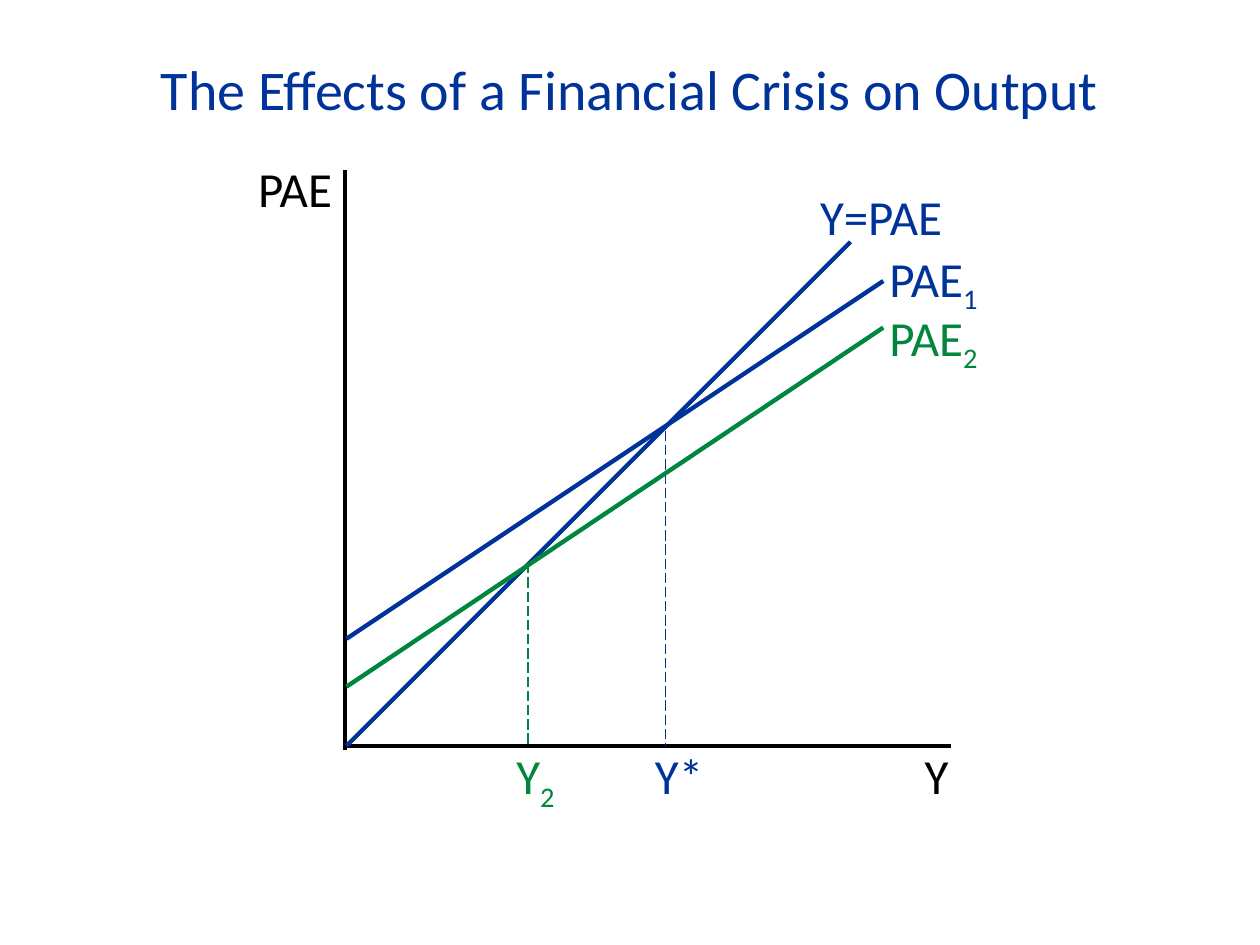
from dataclasses import dataclass

from lxml.etree import SubElement
from pptx import Presentation
from pptx.dml.color import RGBColor
from pptx.enum.dml import MSO_LINE
from pptx.enum.shapes import MSO_CONNECTOR
from pptx.enum.text import MSO_ANCHOR, MSO_AUTO_SIZE, PP_ALIGN
from pptx.oxml.ns import qn
from pptx.util import Inches, Pt


@dataclass(frozen=True)
class Theme:
    font: str = "Calibri"
    title_size: float = 32
    label_size: float = 28
    line_width: float = 2.5
    guide_width: float = 0.75
    black: str = "000000"
    blue: str = "003399"
    green: str = "00863D"


class Diagram:
    def __init__(self, slide, theme):
        self.s = slide
        self.theme = theme

    def text(self, box, text, color, size, sub="", **paragraph_format):
        """Add a text box, with an optional subscript after the text."""
        tb = self.s.shapes.add_textbox(*map(Inches, box))
        tf = tb.text_frame
        tf.word_wrap = True
        tf.auto_size = MSO_AUTO_SIZE.SHAPE_TO_FIT_TEXT
        p = tf.paragraphs[0]
        for name, value in paragraph_format.items():
            setattr(p, name, value)
        font_format = {"name": self.theme.font, "size": Pt(size)}
        for part in filter(None, (text, sub)):
            r = p.add_run()
            r.text = part
            for name, value in font_format.items():
                setattr(r.font, name, value)
            r.font.color.rgb = RGBColor.from_string(color)
        if sub:
            r._r.get_or_add_rPr().set("baseline", "-25000")
        return tf

    def title(self, box, text):
        tf = self.text(box, text, self.theme.blue, self.theme.title_size,
                       alignment=PP_ALIGN.CENTER)
        tf.vertical_anchor = MSO_ANCHOR.MIDDLE

    def label(self, box, text, color, sub="", **paragraph_format):
        self.text(box, text, color, self.theme.label_size, sub, **paragraph_format)

    def line(self, start, end, color, **line_format):
        c = self.s.shapes.add_connector(
            MSO_CONNECTOR.STRAIGHT, *map(Inches, (*start, *end)))
        c.line.color.rgb = RGBColor.from_string(color)
        for name, value in {"width": Pt(self.theme.line_width), **line_format}.items():
            setattr(c.line, name, value)
        SubElement(c._element.spPr, qn("a:effectLst"))

    def guide(self, x, top, bottom, color):
        self.line((x, top), (x, bottom), color,
                  width=Pt(self.theme.guide_width), dash_style=MSO_LINE.LONG_DASH)


def main():
    prs = Presentation()
    prs.slide_width, prs.slide_height = Inches(10), Inches(7.5)
    theme = Theme()
    d = Diagram(prs.slides.add_slide(prs.slide_layouts[6]), theme)

    d.title((0.7, 0.38, 8.6, 0.64), "The Effects of a Financial Crisis on Output")

    # Axes
    x0, y0 = 2.75, 5.92
    d.line((2.74, 1.35), (2.74, 5.95), theme.black)
    d.line((x0, y0), (7.55, y0), theme.black)
    d.label((7.24, 5.87, 0.49, 0.57), "Y", theme.black)
    d.label((1.95, 1.3, 0.82, 0.49), "PAE", theme.black, line_spacing=0.8)

    # 45-degree line
    d.line((x0, y0), (x0 + 4, y0 - 4), theme.blue)
    d.label((6.41, 1.43, 1.25, 0.57), "Y=PAE", theme.blue)

    # Expenditure lines, each with its equilibrium output
    curves = [
        # color, intercept, end, label top, subscript, output x, crossing y, output label
        (theme.blue, 5.07, 2.23, 1.92, "1", 5.28, 3.42, (5.1, "Y*", "")),
        (theme.green, 5.45, 2.6, 2.39, "2", 4.19, 4.47, (4, "Y", "2")),
    ]
    for color, intercept, end, top, sub, x, crossing, output in curves:
        d.line((x0, intercept), (7.01, end), color)
        d.label((6.96, top, 0.96, 0.57), "PAE", color, sub)
        d.guide(x, crossing, y0, color)
        left, name, output_sub = output
        d.label((left, 5.87, 0.66, 0.57), name, color, output_sub)

    prs.save("out.pptx")


if __name__ == "__main__":
    main()
